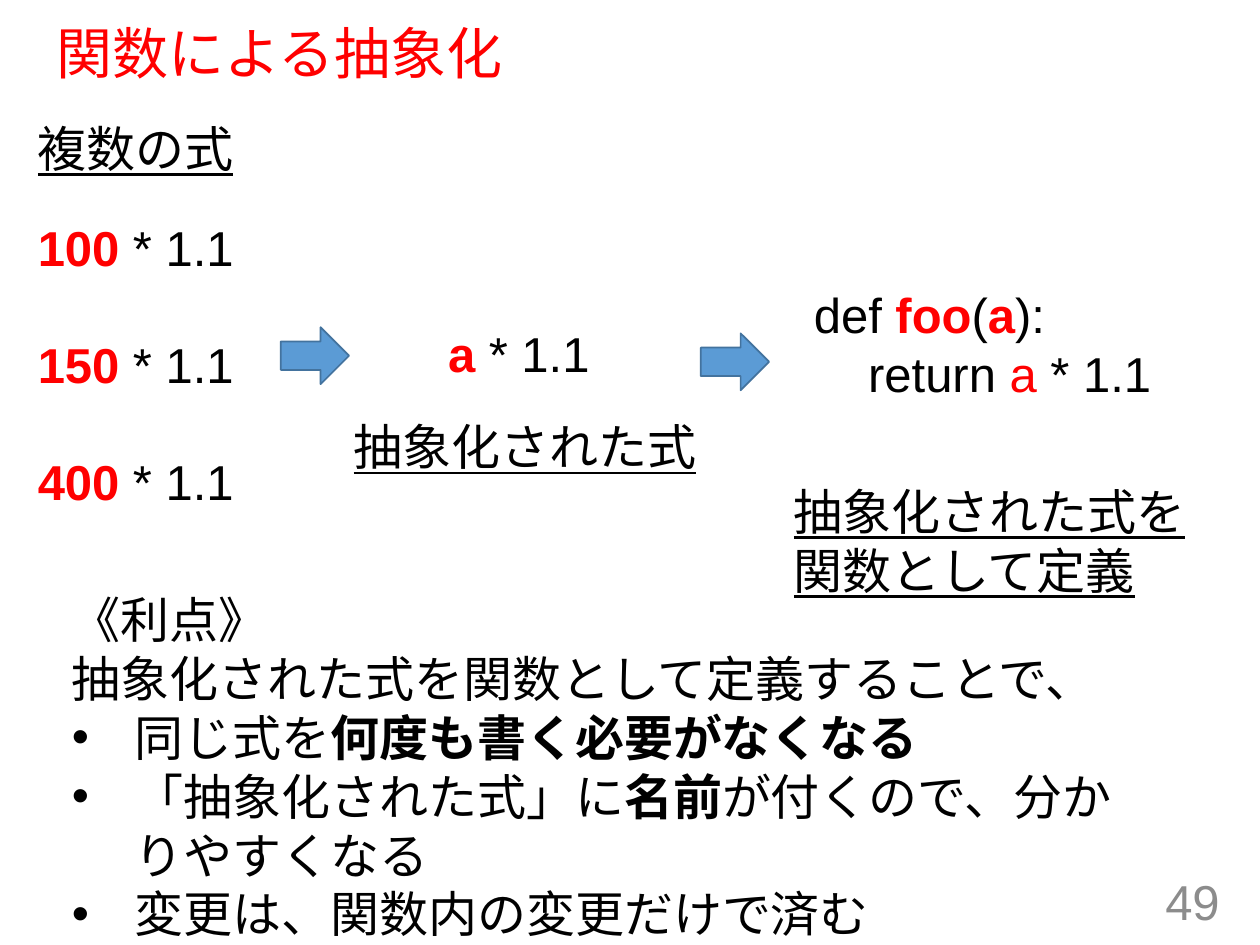
from dataclasses import dataclass

from lxml.etree import SubElement
from pptx import Presentation
from pptx.dml.color import RGBColor
from pptx.enum.shapes import MSO_SHAPE
from pptx.enum.text import MSO_ANCHOR, MSO_AUTO_SIZE, PP_ALIGN
from pptx.oxml.ns import qn
from pptx.util import Pt

FONT = "Arial"
SIZE = 28
COLORS = {
    "text": "000000",
    "accent": "FF0000",
    "number": "8C8C8C",
    "arrow": "5B9BD5",
    "arrow_line": "43739E",
}


@dataclass
class Run:
    text: str
    color: str = "text"
    bold: bool = False
    underline: bool = False
    size: float = SIZE


@dataclass
class Para:
    runs: list[Run]
    bullet: bool = False
    before: float = 0


@dataclass
class Box:
    left: float
    top: float
    width: float
    height: float
    paras: list[Para]
    wrap: bool = True


def rgb(name: str) -> RGBColor:
    return RGBColor.from_string(COLORS[name])


def add_run(p, run: Run) -> None:
    r = p.add_run()
    r.text = run.text
    r.font.name = FONT
    r.font.size = Pt(run.size)
    r.font.bold = run.bold
    r.font.underline = run.underline
    r.font.color.rgb = rgb(run.color)


def add_bullet(p, indent: float) -> None:
    pPr = p._p.get_or_add_pPr()
    pPr.set("marL", str(Pt(indent)))
    pPr.set("indent", str(-Pt(indent)))
    SubElement(pPr, qn("a:buFont")).set("typeface", FONT)
    SubElement(pPr, qn("a:buChar")).set("char", "•")


def add_box(slide, box: Box):
    sp = slide.shapes.add_textbox(
        Pt(box.left), Pt(box.top), Pt(box.width), Pt(box.height))
    tf = sp.text_frame
    tf.word_wrap = box.wrap
    for i, para in enumerate(box.paras):
        p = tf.paragraphs[0] if i == 0 else tf.add_paragraph()
        if para.before:
            p.space_before = Pt(para.before)
        if para.bullet:
            add_bullet(p, 36)
        for run in para.runs:
            add_run(p, run)
    return sp


def add_arrow(slide, left: float, top: float) -> None:
    sp = slide.shapes.add_shape(
        MSO_SHAPE.RIGHT_ARROW, Pt(left), Pt(top), Pt(39), Pt(32.5))
    sp.shadow.inherit = False
    sp.fill.solid()
    sp.fill.fore_color.rgb = rgb("arrow")
    sp.line.color.rgb = rgb("arrow_line")
    sp.line.width = Pt(1)


def add_title(slide, text: str) -> None:
    sp = slide.shapes.title
    sp.left, sp.top, sp.width, sp.height = Pt(25), Pt(13.5), Pt(666), Pt(37)
    tf = sp.text_frame
    tf.auto_size = MSO_AUTO_SIZE.NONE
    tf.vertical_anchor = MSO_ANCHOR.MIDDLE
    p = tf.paragraphs[0]
    p.alignment = PP_ALIGN.LEFT
    p.line_spacing = 0.9
    add_run(p, Run(text, "accent", size=32))


def add_number(slide, text: str) -> None:
    sp = add_box(slide, Box(542, 500.5, 162, 29, [Para([Run(text, "number")])]))
    sp.text_frame.vertical_anchor = MSO_ANCHOR.MIDDLE
    sp.text_frame.paragraphs[0].alignment = PP_ALIGN.RIGHT


def formula(value: str, before: float = 0) -> Para:
    return Para([Run(value, "accent", bold=True), Run(" * 1.1")], before=before)


def caption(text: str) -> list[Para]:
    return [Para([Run(text, underline=True)])]


FORMULAS = [formula(v, 33.5 if i else 0) for i, v in enumerate(("100", "150", "400"))]
FUNCTION = [
    Para([Run("def "), Run("foo", "accent", bold=True), Run("("),
          Run("a", "accent", bold=True), Run("):")]),
    Para([Run("    return "), Run("a", "accent"), Run(" * 1.1")]),
]
BENEFITS = [
    Para([Run("《利点》")]),
    Para([Run("抽象化された式を関数として定義することで、")]),
    Para([Run("同じ式を"), Run("何度も書く必要がなくなる", bold=True)], bullet=True),
    Para([Run("「抽象化された式」に"), Run("名前", bold=True),
          Run("が付くので、分かりやすくなる")], bullet=True),
    Para([Run("変更は、関数内の変更だけで済む")], bullet=True),
]
BOXES = [
    Box(14.5, 64, 180, 95, caption("複数の式"), wrap=False),
    Box(14.5, 120.5, 128, 211, FORMULAS, wrap=False),
    Box(249, 181.5, 96.5, 41, [formula("a")], wrap=False),
    Box(195, 234.5, 238.5, 59, caption("抽象化された式")),
    Box(458, 159, 212.5, 86, FUNCTION, wrap=False),
    Box(446.5, 271.5, 238.5, 59, caption("抽象化された式を関数として定義")),
    Box(34, 333.5, 622, 173.5, BENEFITS),
]


def main() -> None:
    prs = Presentation()
    prs.slide_width, prs.slide_height = Pt(720), Pt(540)
    s = prs.slides.add_slide(prs.slide_layouts[5])
    add_title(s, "関数による抽象化")
    for box in BOXES:
        add_box(s, box)
    add_arrow(s, 160.5, 187)
    add_arrow(s, 400.5, 190.5)
    add_number(s, "49")
    prs.save("out.pptx")


if __name__ == "__main__":
    main()
